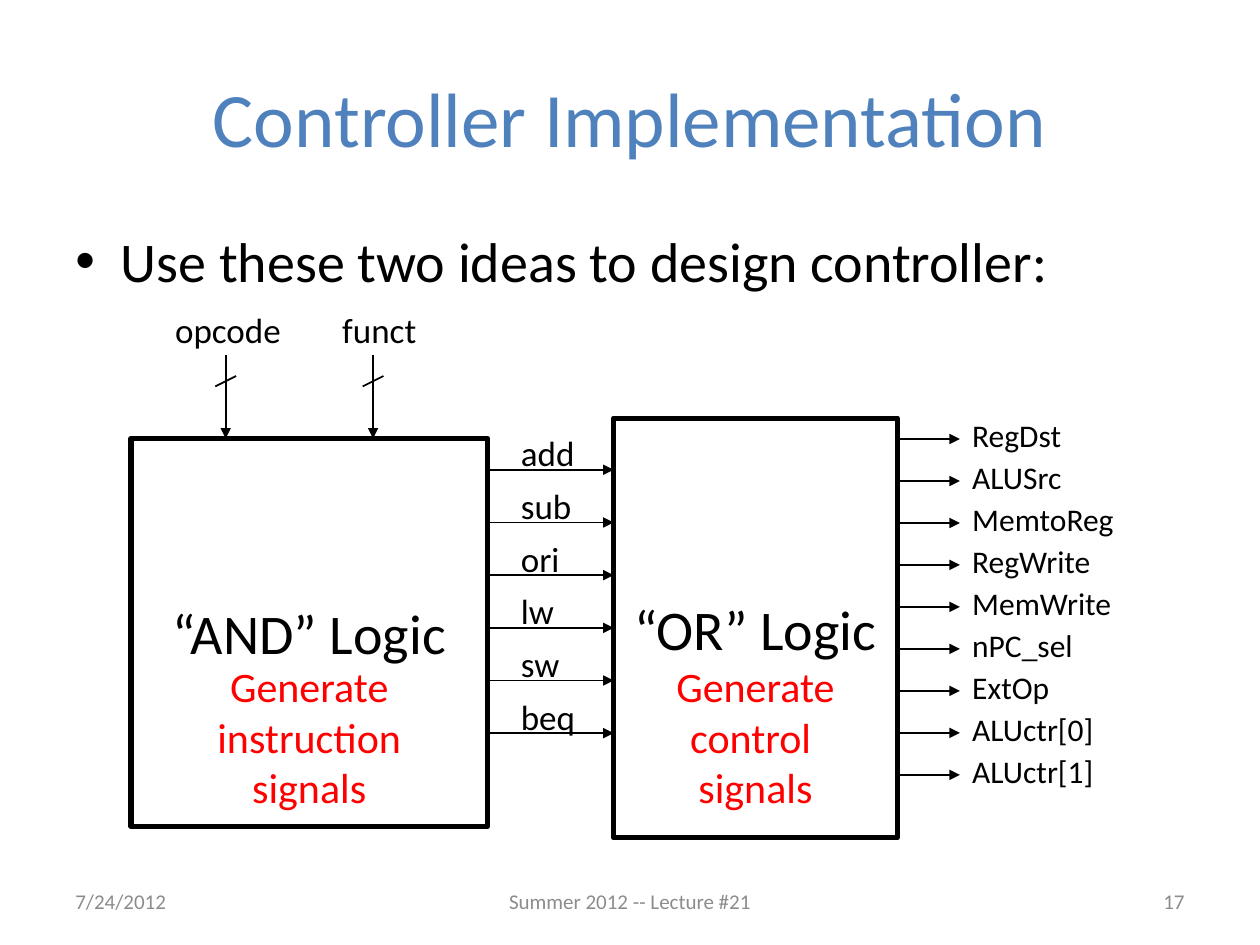
from lxml import etree
from pptx import Presentation
from pptx.dml.color import RGBColor
from pptx.enum.shapes import MSO_CONNECTOR as CONN, MSO_SHAPE as SHAPE
from pptx.enum.text import MSO_ANCHOR as ANCHOR, PP_ALIGN as ALIGN
from pptx.oxml.ns import qn
from pptx.util import Cm, Pt

BLACK = RGBColor(0x00, 0x00, 0x00)
WHITE = RGBColor(0xFF, 0xFF, 0xFF)
BLUE = RGBColor(0x4F, 0x81, 0xBD)
RED = RGBColor(0xFF, 0x00, 0x00)
GRAY = RGBColor(0x8C, 0x8C, 0x8C)
FONT = "Calibri"

# Signal names with the widths of their labels in cm
INPUTS = {"opcode": (3.28, 2.67, 4.55), "funct": (6.65, 2.03, 7.52)}
INSTRUCTIONS = {"add": 1.6, "sub": 1.55, "ori": 1.3, "lw": 1.19, "sw": 1.3, "beq": 1.63}
CONTROLS = {"RegDst": 2.34, "ALUSrc": 2.34, "MemtoReg": 3.4, "RegWrite": 2.92,
            "MemWrite": 3.4, "nPC_sel": 2.57, "ExtOp": 2.08,
            "ALUctr[0]": 2.97, "ALUctr[1]": 2.97}

AND_LEFT, AND_TOP, AND_WIDTH, AND_HEIGHT = 2.64, 8.84, 7.19, 7.82
OR_LEFT, OR_TOP, OR_WIDTH, OR_HEIGHT = 12.37, 8.43, 5.72, 8.46
AND_RIGHT, OR_RIGHT = AND_LEFT + AND_WIDTH, OR_LEFT + OR_WIDTH


def fill_text(s, text, size, color=BLACK, align=ALIGN.LEFT, anchor=ANCHOR.TOP, wrap=True):
    tf = s.text_frame
    tf.word_wrap = wrap
    tf.vertical_anchor = anchor
    p = tf.paragraphs[0]
    p.text = text
    p.alignment = align
    for r in p.runs:
        for name, value in {"name": FONT, "size": Pt(size)}.items():
            setattr(r.font, name, value)
        r.font.color.rgb = color
    return p


def add_text(shapes, box, text, size, **style):
    s = shapes.add_textbox(*map(Cm, box))
    return fill_text(s, text, size, **style)


def add_block(shapes, box, text):
    s = shapes.add_shape(SHAPE.RECTANGLE, *map(Cm, box))
    s.shadow.inherit = False
    s.fill.solid()
    s.fill.fore_color.rgb = WHITE
    s.line.color.rgb = BLACK
    s.line.width = Pt(3)
    fill_text(s, text, 32, align=ALIGN.CENTER, anchor=ANCHOR.MIDDLE, wrap=False)


def add_line(shapes, ends, arrow=True):
    s = shapes.add_connector(CONN.STRAIGHT, *map(Cm, ends))
    s.line.color.rgb = BLACK
    s.line.width = Pt(1)
    if arrow:
        etree.SubElement(s.line._get_or_add_ln(), qn("a:tailEnd"), type="triangle")
    etree.SubElement(s._element.spPr, qn("a:effectLst"))


def add_signals(shapes, signals, ends, rows, label_left, label_rise, height, size):
    """Evenly spaced arrows, each with its label."""
    first, last = rows
    step = (last - first) / (len(signals) - 1)
    for i, (name, width) in enumerate(signals.items()):
        y = first + i * step
        add_line(shapes, (ends[0], y, ends[1], y))
        add_text(shapes, (label_left, y - label_rise, width, height), name, size, wrap=False)


def add_bullet(p, indent):
    pPr = p._p.get_or_add_pPr()
    pPr.set("marL", str(Cm(indent)))
    pPr.set("indent", str(-Cm(indent)))
    etree.SubElement(pPr, qn("a:buFont"), typeface="Arial")
    etree.SubElement(pPr, qn("a:buChar"), char="•")


def main():
    prs = Presentation()
    prs.slide_width, prs.slide_height = Cm(25.4), Cm(19.05)
    shapes = prs.slides.add_slide(prs.slide_layouts[6]).shapes

    # Title and bullet
    add_text(shapes, (1.27, 0.76, 22.86, 3.18), "Controller Implementation", 44,
             color=BLUE, align=ALIGN.CENTER, anchor=ANCHOR.MIDDLE)
    p = add_text(shapes, (1.27, 4.45, 22.86, 1.63),
                 "Use these two ideas to design controller:", 32)
    add_bullet(p, 0.92)

    # Logic blocks
    add_block(shapes, (AND_LEFT, AND_TOP, AND_WIDTH, AND_HEIGHT), "“AND” Logic")
    add_block(shapes, (OR_LEFT, OR_TOP, OR_WIDTH, OR_HEIGHT), "“OR” Logic")
    for left, width, text in ((AND_LEFT, AND_WIDTH, "Generate instruction\vsignals"),
                              (OR_LEFT, OR_WIDTH, "Generate control \vsignals")):
        add_text(shapes, (left, 13.2, width, 3.33), text, 24, color=RED, align=ALIGN.CENTER)

    # Input buses, each with a slash across its arrow
    for name, (left, width, x) in INPUTS.items():
        add_text(shapes, (left, 6.1, width, 1.11), name, 20, wrap=False)
        add_line(shapes, (x, 7.16, x, AND_TOP))
        add_line(shapes, (x - 0.21, 7.79, x + 0.21, 7.58), arrow=False)

    # Signals between the blocks and out of the second one
    add_signals(shapes, INSTRUCTIONS, (AND_RIGHT, OR_LEFT), (9.47, 14.78),
                10.25, 0.89, 1.11, 20)
    add_signals(shapes, CONTROLS, (OR_RIGHT, 19.35), (8.85, 15.62),
                19.35, 0.59, 1.02, 18)

    # Footer
    for left, width, text, align in ((1.27, 5.93, "7/24/2012", ALIGN.LEFT),
                                     (8.68, 8.04, "Summer 2012 -- Lecture #21", ALIGN.CENTER),
                                     (18.2, 5.93, "17", ALIGN.RIGHT)):
        add_text(shapes, (left, 17.65, width, 1.02), text, 12, color=GRAY,
                 align=align, anchor=ANCHOR.MIDDLE)

    prs.save("out.pptx")


if __name__ == "__main__":
    main()
